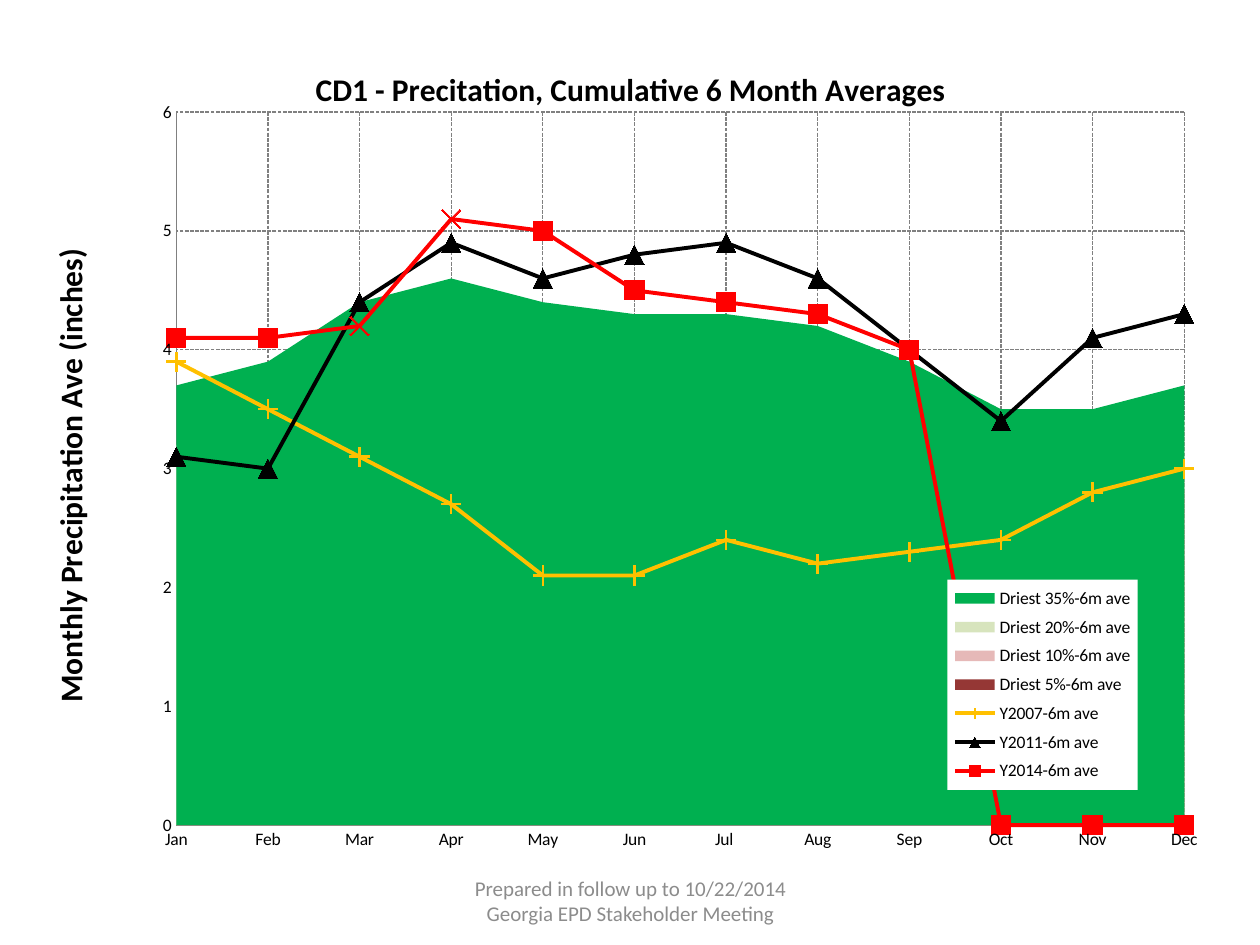
from dataclasses import dataclass

from lxml import etree
from pptx import Presentation
from pptx import util as u
from pptx.chart.data import CategoryChartData
from pptx.dml.color import RGBColor
from pptx.enum import chart as ch, dml, text
from pptx.oxml.ns import qn

FONT = "Calibri"
CHART_WIDTH, CHART_HEIGHT = u.Inches(9.48), u.Inches(6.89)
COLORS = {"green": "00B050", "sage": "D7E4BD", "rose": "E6B9B8", "maroon": "953735",
          "amber": "FFC000", "black": "000000", "red": "FF0000",
          "grid": "808080", "footer": "8C8C8C", "white": "FFFFFF"}
MONTHS = ["Jan", "Feb", "Mar", "Apr", "May", "Jun", "Jul ", "Aug", "Sep", "Oct", "Nov", "Dec"]
MARKER = ch.XL_MARKER_STYLE


@dataclass
class Band:
    name: str
    color: str
    values: list


@dataclass
class Year(Band):
    marker: object
    crossed_months: tuple = ()


BANDS = [
    Band("Driest 35%-6m ave", "green", [3.7, 3.9, 4.4, 4.6, 4.4, 4.3, 4.3, 4.2, 3.9, 3.5, 3.5, 3.7]),
    Band("Driest 20%-6m ave", "sage", [3.2, 3.5, 3.8, 4, 4, 3.9, 3.8, 3.8, 3.5, 3.3, 3.2, 3.4]),
    Band("Driest 10%-6m ave", "rose", [3, 3.1, 3.2, 3.6, 3.7, 3.5, 3.4, 3.4, 3.1, 2.9, 2.8, 3]),
    Band("Driest 5%-6m ave", "maroon", [2.8, 2.7, 3.1, 3.2, 3.4, 3.3, 3.2, 3.1, 2.9, 2.6, 2.6, 2.8]),
]
YEARS = [
    Year("Y2007-6m ave", "amber", [3.9, 3.5, 3.1, 2.7, 2.1, 2.1, 2.4, 2.2, 2.3, 2.4, 2.8, 3], MARKER.PLUS),
    Year("Y2011-6m ave", "black", [3.1, 3, 4.4, 4.9, 4.6, 4.8, 4.9, 4.6, 4, 3.4, 4.1, 4.3], MARKER.TRIANGLE),
    Year("Y2014-6m ave", "red", [4.1, 4.1, 4.2, 5.1, 5, 4.5, 4.4, 4.3, 4] + [None] * 3,
         MARKER.SQUARE, crossed_months=(2, 3)),
]


def rgb(name: str) -> RGBColor:
    return RGBColor.from_string(COLORS[name])


def write_text(frame, content: str, *, size: float, color: str = "black", bold: bool = False,
               align=text.PP_ALIGN.CENTER) -> None:
    paragraph = frame.paragraphs[0]
    paragraph.alignment = align
    run = paragraph.add_run()
    run.text = content
    run.font.name, run.font.size, run.font.bold = FONT, u.Pt(size), bold
    run.font.color.rgb = rgb(color)


def place(element, left: u.Length, top: u.Length, width=None, height=None, inner: bool = False) -> None:
    """Give a chart part a manual layout, measured from the chart's top left corner."""
    for old in element.findall(qn("c:layout")):
        element.remove(old)
    layout = etree.Element(qn("c:layout"))
    manual = etree.SubElement(layout, qn("c:manualLayout"))
    entries = [("layoutTarget", "inner")] if inner else []
    entries += [("xMode", "edge"), ("yMode", "edge"),
                ("x", left / CHART_WIDTH), ("y", top / CHART_HEIGHT)]
    if width is not None:
        entries += [("w", width / CHART_WIDTH), ("h", height / CHART_HEIGHT)]
    for tag, value in entries:
        etree.SubElement(manual, qn(f"c:{tag}")).set("val", str(value))
    before = [child for child in element if child.tag in (qn("c:tx"), qn("c:legendPos"))]
    element.insert(len(before), layout)


def split_off_lines(chart, first: int) -> None:
    """Move the series from index first on to a line plot on the same axes."""
    area = chart.plots[0]._element
    line = etree.Element(qn("c:lineChart"))
    area.addnext(line)
    etree.SubElement(line, qn("c:grouping")).set("val", "standard")
    etree.SubElement(line, qn("c:varyColors")).set("val", "0")
    for series in area.findall(qn("c:ser"))[first:]:
        for flag in series.findall(qn("c:invertIfNegative")):
            series.remove(flag)
        line.append(series)
    etree.SubElement(line, qn("c:marker")).set("val", "1")
    for axis_id in area.findall(qn("c:axId")):
        etree.SubElement(line, qn("c:axId")).set("val", axis_id.get("val"))


def style_marked_line(item, color: str, marker) -> None:
    item.format.line.width = u.Pt(2.25)
    item.format.line.color.rgb = rgb(color)
    item.marker.style, item.marker.size = marker, 11
    item.marker.format.fill.solid()
    item.marker.format.fill.fore_color.rgb = rgb(color)
    item.marker.format.line.color.rgb = rgb(color)


def style_axis(axis) -> None:
    axis.has_major_gridlines = True
    grid = axis.major_gridlines.format.line
    grid.width, grid.dash_style = u.Pt(0.75), dml.MSO_LINE.SQUARE_DOT
    axis.format.line.width = u.Pt(0.75)
    for line in (grid, axis.format.line):
        line.color.rgb = rgb("grid")
    axis.major_tick_mark = axis.minor_tick_mark = ch.XL_TICK_MARK.NONE
    axis.tick_labels.font.size = u.Pt(10)


def add_precipitation_chart(slide) -> None:
    data = CategoryChartData(number_format="0.0")
    data.categories = MONTHS
    for item in BANDS + YEARS:
        data.add_series(item.name, item.values)
    chart = slide.shapes.add_chart(ch.XL_CHART_TYPE.AREA, u.Inches(0.26), u.Inches(0.31),
                                   CHART_WIDTH, CHART_HEIGHT, data).chart
    chart.font.name, chart.font.size = FONT, u.Pt(10)
    chart.font.color.rgb = rgb("black")

    split_off_lines(chart, len(BANDS))
    areas, lines = chart.plots
    areas.vary_by_categories = False
    for series, band in zip(areas.series, BANDS):
        series.format.fill.solid()
        series.format.fill.fore_color.rgb = rgb(band.color)
        series.format.line.fill.background()
    for series, year in zip(lines.series, YEARS):
        style_marked_line(series, year.color, year.marker)
        series.smooth = False
        for month in year.crossed_months:
            style_marked_line(series.points[month], year.color, MARKER.X)

    months, inches = chart.category_axis, chart.value_axis
    for axis in (months, inches):
        style_axis(axis)
    inches.minimum_scale, inches.maximum_scale, inches.major_unit = 0, 6, 1
    inches.tick_labels.number_format = "#,##0"
    inches.tick_labels.number_format_is_linked = False
    inches._element.find(qn("c:crossBetween")).set("val", "midCat")

    chart.has_title = True
    write_text(chart.chart_title.text_frame, "CD1 - Precitation, Cumulative 6 Month Averages",
               size=18, bold=True)
    chart.chart_title.include_in_layout = True
    write_text(inches.axis_title.text_frame, "Monthly Precipitation Ave (inches)", size=18, bold=True)
    body = inches.axis_title.text_frame._txBody.find(qn("a:bodyPr"))
    body.set("rot", "-5400000")
    body.set("vert", "horz")

    chart.has_legend = True
    chart.legend.position = ch.XL_LEGEND_POSITION.RIGHT
    chart.legend.include_in_layout = False
    chart.legend.font.size = u.Pt(10)
    legend = chart.legend._element
    properties = etree.Element(qn("c:spPr"))
    fill = etree.SubElement(properties, qn("a:solidFill"))
    etree.SubElement(fill, qn("a:srgbClr")).set("val", COLORS["white"])
    legend.find(qn("c:txPr")).addprevious(properties)

    plot_area = chart._chartSpace.chart.plotArea
    place(chart.chart_title._element, u.Inches(2.2), u.Inches(0.18))
    place(inches.axis_title._element, u.Inches(0.08), u.Inches(1.62))
    place(legend, u.Inches(7.26), u.Inches(4.29), u.Inches(1.51), u.Inches(1.67))
    place(plot_area, u.Inches(1.14), u.Inches(0.58), u.Inches(8), u.Inches(5.66), inner=True)
    plot_area.getparent().find(qn("c:dispBlanksAs")).set("val", "zero")


def add_footer(slide) -> None:
    frame = slide.shapes.add_textbox(u.Inches(3.42), u.Inches(6.95), u.Inches(3.17), u.Inches(0.4)).text_frame
    frame.word_wrap = True
    frame.vertical_anchor = text.MSO_ANCHOR.MIDDLE
    write_text(frame, "Prepared in follow up to 10/22/2014 Georgia EPD Stakeholder Meeting",
               size=12, color="footer")


def main() -> None:
    deck = Presentation()
    deck.slide_width, deck.slide_height = u.Inches(10), u.Inches(7.5)
    slide = deck.slides.add_slide(deck.slide_layouts[6])
    add_precipitation_chart(slide)
    add_footer(slide)
    deck.save("out.pptx")


if __name__ == "__main__":
    main()
